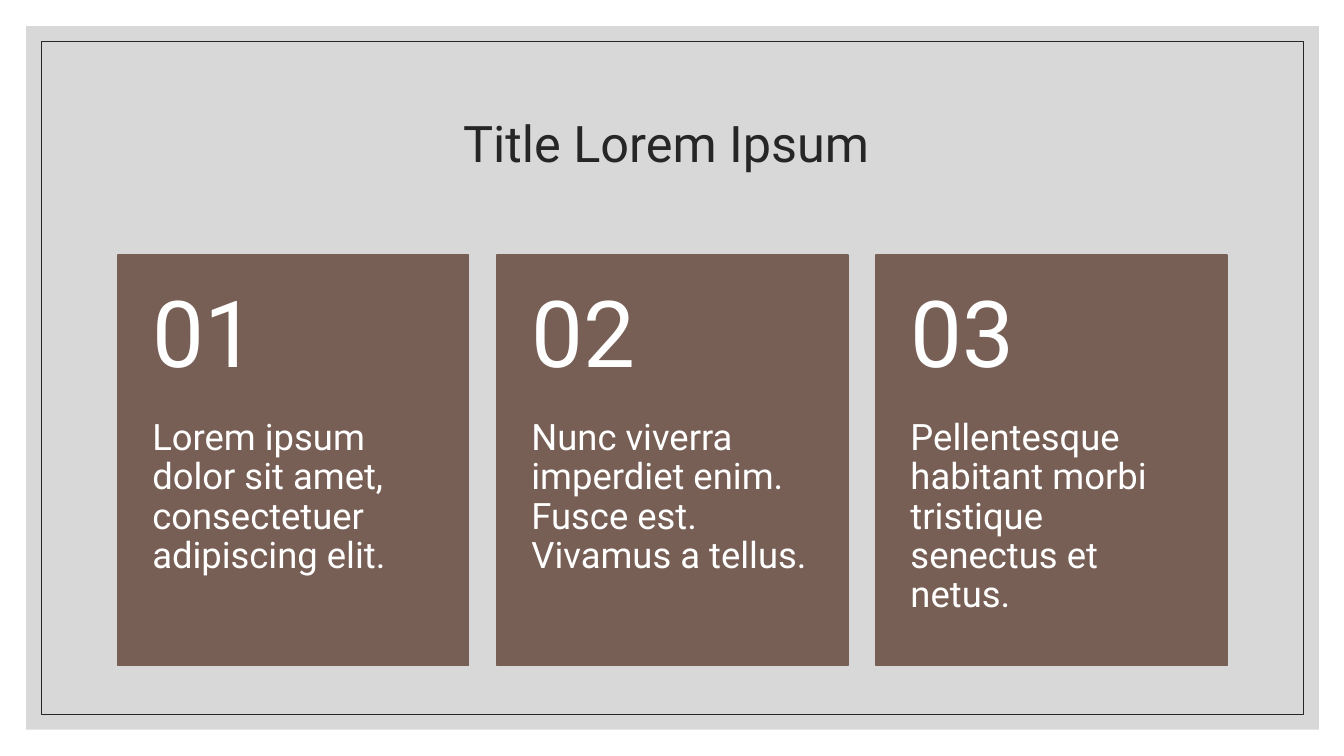
import pptx
import pptx.dml.color
import pptx.enum.shapes
import pptx.enum.text
import pptx.oxml
import pptx.oxml.ns
import pptx.util
from dataclasses import dataclass

Inches = pptx.util.Inches
Pt = pptx.util.Pt
Align = pptx.enum.text.PP_ALIGN
Anchor = pptx.enum.text.MSO_ANCHOR


@dataclass(frozen=True)
class Theme:
    font: str = "Roboto"
    ink: str = "262626"
    panel: str = "BFBFBF"
    card: str = "775F55"
    light: str = "FFFFFF"
    title: int = 36
    number: int = 66
    body: int = 26


THEME = Theme()
CARDS = [
    ("01", "Lorem ipsum dolor sit amet, consectetuer adipiscing elit."),
    ("02", "Nunc viverra imperdiet enim. Fusce est. Vivamus a tellus."),
    ("03", "Pellentesque habitant morbi tristique senectus et netus."),
]


def color(code):
    return pptx.dml.color.RGBColor.from_string(code)


def add_rect(slide, box, fill=None, line=None, weight=1, alpha=None):
    rect = slide.shapes.add_shape(
        pptx.enum.shapes.MSO_SHAPE.RECTANGLE, *map(Inches, box))
    rect.shadow.inherit = False
    if fill:
        rect.fill.solid()
        rect.fill.fore_color.rgb = color(fill)
    else:
        rect.fill.background()
    if line:
        rect.line.color.rgb = color(line)
        rect.line.width = Pt(weight)
    else:
        rect.line.fill.background()
    if alpha:
        tone = rect.fill._xPr.find(".//" + pptx.oxml.ns.qn("a:srgbClr"))
        pptx.oxml.ns.qn("a:alpha")
        node = pptx.oxml.parse_xml(
            f'<a:alpha {pptx.oxml.ns.nsdecls("a")} val="{alpha * 1000}"/>')
        tone.append(node)
    return rect


def add_text(slide, box, text, size, ink, align=Align.LEFT,
             anchor=Anchor.TOP, inset=(0.1, 0.05, 0.1, 0.05)):
    frame = slide.shapes.add_textbox(*map(Inches, box)).text_frame
    frame.word_wrap = True
    frame.vertical_anchor = anchor
    (frame.margin_left, frame.margin_top,
     frame.margin_right, frame.margin_bottom) = map(Inches, inset)
    para = frame.paragraphs[0]
    para.alignment = align
    para.line_spacing = 0.9
    run = para.add_run()
    run.text = text
    run.font.name = THEME.font
    run.font.size = Pt(size)
    run.font.color.rgb = color(ink)


def add_frame(slide, box):
    # Grey panel with a thin line set inside it
    left, top, width, height = box
    gap = 0.15
    add_rect(slide, box, fill=THEME.panel, alpha=60)
    inner = (left + gap, top + gap, width - 2 * gap, height - 2 * gap)
    add_rect(slide, inner, line=THEME.ink, weight=0.5)


def add_title(slide, box):
    add_text(slide, box, "Title Lorem Ipsum ", THEME.title, THEME.ink,
             align=Align.CENTER, anchor=Anchor.MIDDLE)


def add_card(slide, box, number, body):
    # Number in the top two fifths, body text below
    left, top, width, height = box
    head = height * 0.4
    add_rect(slide, box, fill=THEME.card, line=THEME.card)
    add_text(slide, (left, top + head, width, height - head), body,
             THEME.body, THEME.light, inset=(0.34, 0, 0.34, 0.36))
    add_text(slide, (left, top, width, head), number,
             THEME.number, THEME.light, anchor=Anchor.MIDDLE,
             inset=(0.34, 0.18, 0.34, 0.18))


def add_cards(slide, box, gap=0.28):
    # Equal columns across the box
    left, top, width, height = box
    wide = (width - gap * (len(CARDS) - 1)) / len(CARDS)
    for i, (number, body) in enumerate(CARDS):
        add_card(slide, (left + i * (wide + gap), top, wide, height),
                 number, body)


def main():
    deck = pptx.Presentation()
    deck.slide_width = Inches(13.33)
    deck.slide_height = Inches(7.5)
    slide = deck.slides.add_slide(deck.slide_layouts[6])
    add_frame(slide, (0.26, 0.26, 12.82, 6.98))
    add_title(slide, (1.17, 0.7, 11, 1.5))
    add_cards(slide, (1.17, 2.53, 11, 4.07))
    deck.save("out.pptx")


if __name__ == "__main__":
    main()
